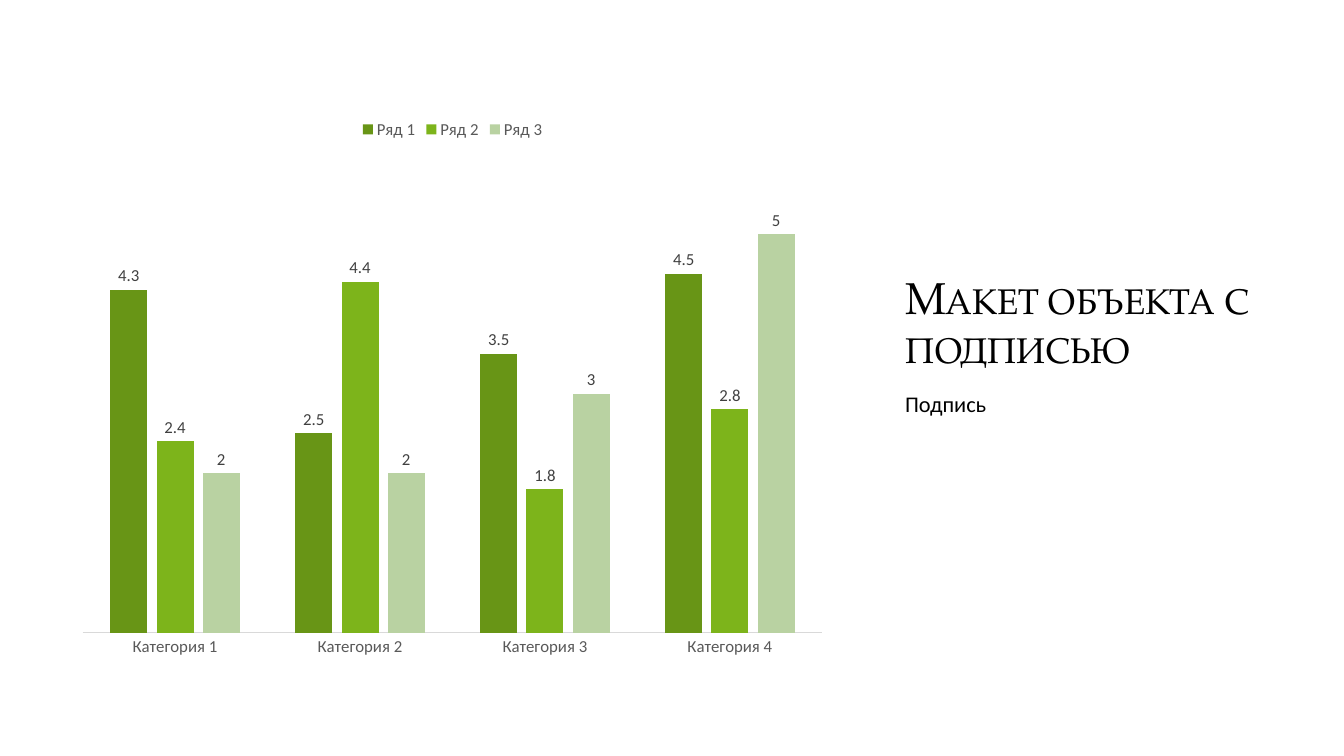
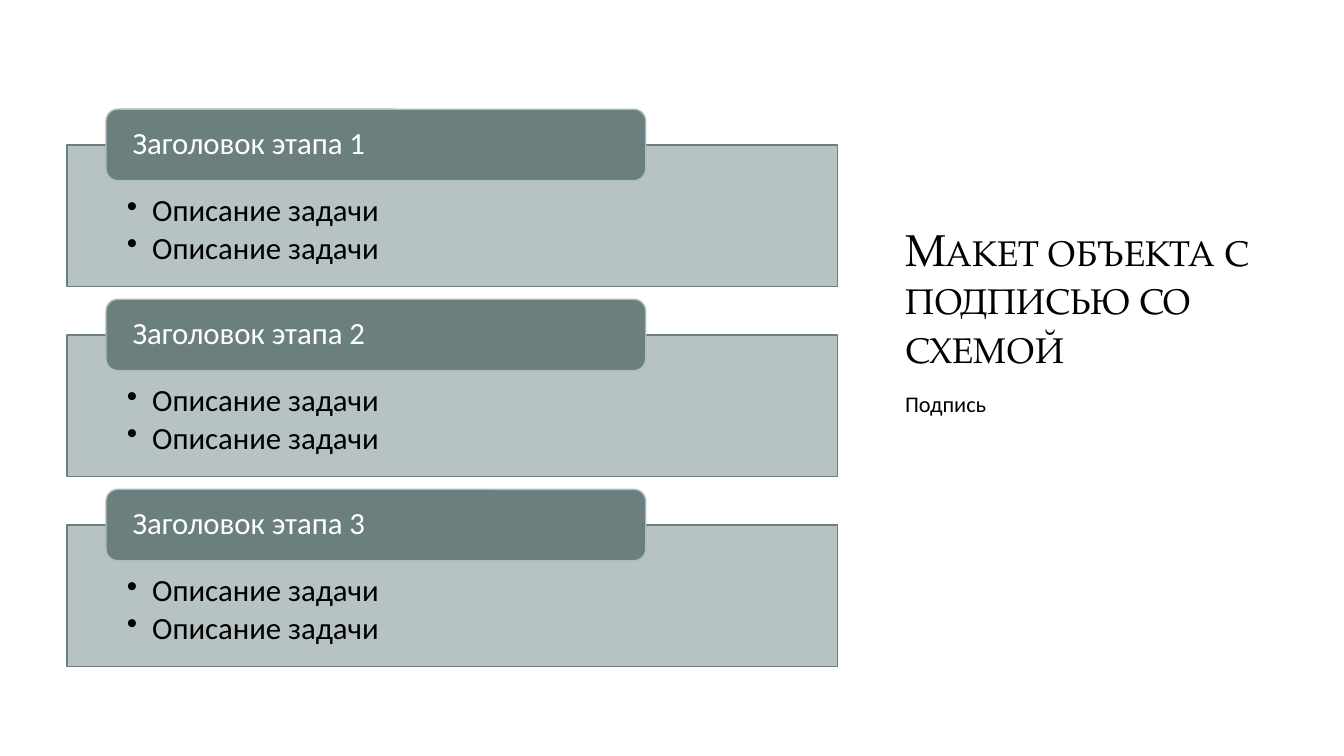
from lxml.etree import SubElement
from pptx import Presentation
from pptx.chart.data import CategoryChartData
from pptx.dml.color import RGBColor
from pptx.enum.chart import XL_CHART_TYPE, XL_LABEL_POSITION, XL_LEGEND_POSITION, XL_TICK_MARK
from pptx.enum.shapes import MSO_SHAPE
from pptx.enum.text import MSO_ANCHOR, PP_ALIGN
from pptx.oxml.ns import qn
from pptx.util import Emu, Pt

EMU_PER_PX = 9525
SLIDE_SIZE = (1280, 720)


def px(length):
    return Emu(length * EMU_PER_PX)


def color(hex_value):
    return RGBColor.from_string(hex_value)


def set_values(target, values):
    for name, value in values.items():
        setattr(target, name, value)


class Deck:
    TITLE_FONT, BODY_FONT = "TeX Gyre Pagella", "Calibri"
    BLACK, WHITE = "000000", "FFFFFF"
    DARK_SAGE, LIGHT_SAGE = "6B7F7F", "B0BCBC"
    AXIS_TEXT, LABEL_TEXT, AXIS_LINE = "595959", "404040", "D9D9D9"
    SERIES_COLORS = ("689516", "7DB41B", "B9D2A2")
    TITLE_BOX = (852, 120, 365, 240)
    CAPTION_BOX = (852, 369, 365, 221)

    def __init__(self):
        self.presentation = Presentation()
        width, height = SLIDE_SIZE
        set_values(self.presentation, {"slide_width": px(width), "slide_height": px(height)})
        self.slide = None

    def style_font(self, font, size, hex_value, name=BODY_FONT):
        set_values(font, {"size": Pt(size), "name": name})
        font.color.rgb = color(hex_value)

    def fill_text(self, frame, lines, size, hex_value, name=BODY_FONT, anchor=MSO_ANCHOR.TOP,
                  margins=(10, 5, 10, 5), space_after=0, bullet=False, small_caps=False):
        left, top, right, bottom = map(px, margins)
        set_values(frame, {"word_wrap": True, "vertical_anchor": anchor,
                           "margin_left": left, "margin_top": top,
                           "margin_right": right, "margin_bottom": bottom})
        for index, line in enumerate(lines):
            paragraph = frame.add_paragraph() if index else frame.paragraphs[0]
            set_values(paragraph, {"alignment": PP_ALIGN.LEFT, "line_spacing": 0.9,
                                   "space_after": Pt(space_after)})
            if bullet:
                properties = paragraph._p.get_or_add_pPr()
                properties.set("marL", str(px(24)))
                properties.set("indent", str(px(-24)))
                SubElement(properties, qn("a:buChar"), char="•")
            run = paragraph.add_run()
            run.text = line
            self.style_font(run.font, size, hex_value, name)
            if small_caps:
                run._r.get_or_add_rPr().set("cap", "small")

    def text(self, box, line, size, **style):
        frame = self.slide.shapes.add_textbox(*map(px, box)).text_frame
        self.fill_text(frame, [line], size, self.BLACK, **style)

    def captioned_slide(self, title, caption):
        """Start a slide with its title and caption on the right."""
        self.slide = self.presentation.slides.add_slide(self.presentation.slide_layouts[6])
        self.text(self.TITLE_BOX, title, 32, name=self.TITLE_FONT,
                  anchor=MSO_ANCHOR.BOTTOM, small_caps=True)
        self.text(self.CAPTION_BOX, caption, 16)

    def shape(self, preset, box, fill, line, opacity=100):
        shape = self.slide.shapes.add_shape(preset, *map(px, box))
        shape.shadow.inherit = False
        shape.fill.solid()
        shape.fill.fore_color.rgb = color(fill)
        shape.line.color.rgb = color(line)
        shape.line.width = Pt(1)
        if opacity < 100:
            fill_color = shape._element.spPr.find(qn("a:solidFill")).find(qn("a:srgbClr"))
            SubElement(fill_color, qn("a:alpha"), val=str(opacity * 1000))
        return shape.text_frame

    def stage(self, top, heading, tasks):
        """Draw a task panel with its heading tab over the upper edge."""
        panel = self.shape(MSO_SHAPE.RECTANGLE, (64, top + 34, 734, 135),
                           self.LIGHT_SAGE, self.DARK_SAGE, opacity=90)
        self.fill_text(panel, tasks, 22, self.BLACK, margins=(57, 48, 57, 16),
                       space_after=3, bullet=True)
        tab = self.shape(MSO_SHAPE.ROUNDED_RECTANGLE, (101, top, 514, 68),
                         self.DARK_SAGE, self.LIGHT_SAGE)
        self.fill_text(tab, [heading], 22, self.WHITE, anchor=MSO_ANCHOR.MIDDLE,
                       margins=(22, 0, 22, 0))

    def column_chart(self, box, categories, series_values):
        data = CategoryChartData()
        data.categories = categories
        for name, values in series_values.items():
            data.add_series(name, values)
        chart = self.slide.shapes.add_chart(
            XL_CHART_TYPE.COLUMN_CLUSTERED, *map(px, box), data).chart
        set_values(chart, {"has_title": False, "has_legend": True})
        self.style_font(chart.font, 10, self.BLACK)
        set_values(chart.legend, {"position": XL_LEGEND_POSITION.TOP,
                                  "include_in_layout": False})
        self.style_font(chart.legend.font, 12, self.AXIS_TEXT)

        set_values(chart.value_axis, {"visible": False, "has_major_gridlines": False,
                                      "minimum_scale": 0, "maximum_scale": 6})
        category_axis = chart.category_axis
        set_values(category_axis, {"major_tick_mark": XL_TICK_MARK.NONE,
                                   "minor_tick_mark": XL_TICK_MARK.NONE})
        self.style_font(category_axis.tick_labels.font, 12, self.AXIS_TEXT)
        category_axis.format.line.color.rgb = color(self.AXIS_LINE)
        category_axis.format.line.width = Pt(0.75)

        plot = chart.plots[0]
        set_values(plot, {"gap_width": 150, "overlap": -25, "vary_by_categories": False})
        for series, fill in zip(plot.series, self.SERIES_COLORS):
            series.format.fill.solid()
            series.format.fill.fore_color.rgb = color(fill)
            labels = series.data_labels
            set_values(labels, {"show_value": True,
                                "position": XL_LABEL_POSITION.OUTSIDE_END})
            self.style_font(labels.font, 12, self.LABEL_TEXT)


def main():
    deck = Deck()

    deck.captioned_slide("Макет объекта с подписью", "Подпись")
    deck.column_chart(
        (64, 103, 734, 533),
        [f"Категория {number}" for number in range(1, 5)],
        {"Ряд 1": (4.3, 2.5, 3.5, 4.5),
         "Ряд 2": (2.4, 4.4, 1.8, 2.8),
         "Ряд 3": (2, 2, 3, 5)})

    deck.captioned_slide("Макет объекта с подписью со схемой", "Подпись")
    first_top, stage_pitch = 104, 181
    for index in range(3):
        deck.stage(first_top + index * stage_pitch, f"Заголовок этапа {index + 1}",
                   ["Описание задачи"] * 2)

    deck.presentation.save("out.pptx")


if __name__ == "__main__":
    main()
